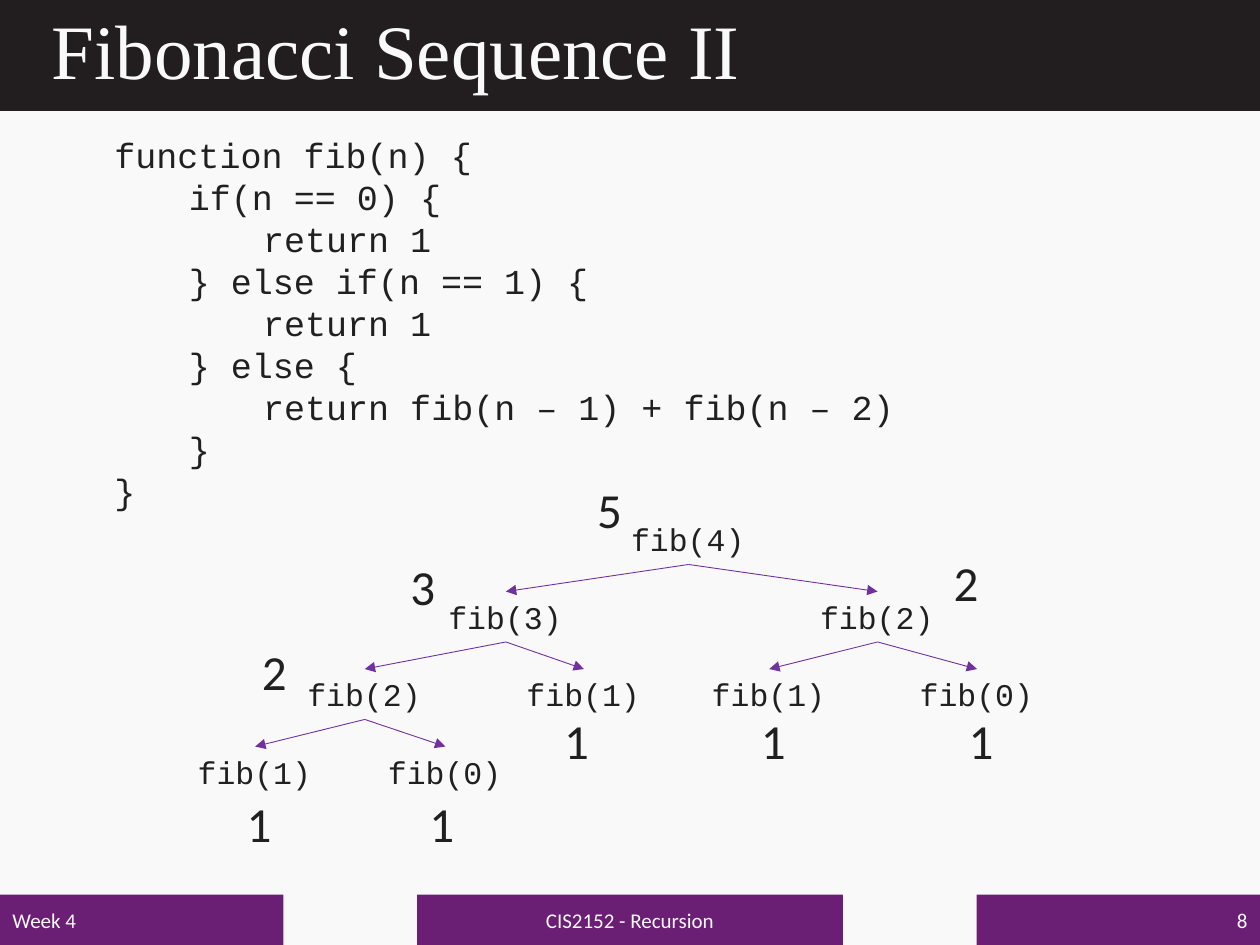
from dataclasses import dataclass

from lxml import etree
from pptx import Presentation
from pptx.dml.color import RGBColor
from pptx.enum import shapes, text
from pptx.oxml.ns import qn
from pptx.util import Inches, Pt


@dataclass(frozen=True)
class Theme:
    paper: str = "F9F9F9"
    ink: str = "202020"
    band: str = "221E1F"
    foot: str = "6A1F74"
    edge: str = "7030A0"
    serif: str = "Times New Roman"
    sans: str = "Calibri"
    mono: str = "Courier New"
    head: int = 44
    value: int = 28
    code: int = 20
    call: int = 18
    small: int = 12


@dataclass(frozen=True)
class Node:
    """One call: its left edge, its result and where that sits from the call."""
    name: str
    left: float
    value: str
    shift: tuple
    kids: tuple = ()


THEME = Theme()
ALIGN = text.PP_ALIGN
TAB = 0.59
CALL_W, CALL_H, ROW = 1.11, 0.4, 0.615
VALUE_W, VALUE_H = 0.4, 0.57

CODE = """function fib(n) {
\tif(n == 0) {
\t\treturn 1
\t} else if(n == 1) {
\t\treturn 1
\t} else {
\t\treturn fib(n – 1) + fib(n – 2)
\t}
}"""

TREE = Node("fib(4)", 3.44, "5", (-0.27, -0.32), (
    Node("fib(3)", 1.99, "3", (-0.3, -0.33), (
        Node("fib(2)", 0.87, "2", (-0.36, -0.27), (
            Node("fib(1)", 0, "1", (0.39, 0.32)),
            Node("fib(0)", 1.51, "1", (0.33, 0.32)))),
        Node("fib(1)", 2.61, "1", (0.3, 0.28)))),
    Node("fib(2)", 4.94, "2", (1.06, -0.36), (
        Node("fib(1)", 4.08, "1", (0.39, 0.28)),
        Node("fib(0)", 5.73, "1", (0.39, 0.28))))))


def color(code):
    return RGBColor.from_string(code)


def style(frame, face, size, ink, align=None):
    for para in frame.paragraphs:
        para.font.name = face
        para.font.size = Pt(size)
        para.font.color.rgb = color(ink)
        if align is not None:
            para.alignment = align


def add_bar(slide, box, fill):
    bar = slide.shapes.add_shape(shapes.MSO_SHAPE.RECTANGLE, *map(Inches, box))
    bar.shadow.inherit = False
    bar.fill.solid()
    bar.fill.fore_color.rgb = color(fill)
    bar.line.fill.background()
    return bar


def add_text(slide, box, words, face, size, ink, wrap=True):
    area = slide.shapes.add_textbox(*map(Inches, box))
    frame = area.text_frame
    frame.text = words
    frame.word_wrap = wrap
    frame.auto_size = text.MSO_AUTO_SIZE.SHAPE_TO_FIT_TEXT
    style(frame, face, size, ink)
    return area


def add_title(slide, box, words):
    left, top, width, height = box
    add_bar(slide, box, THEME.band)
    area = add_text(slide, (left + 0.31, top, width - 0.61, height - 0.02),
                    words, THEME.serif, THEME.head, THEME.paper)
    frame = area.text_frame
    frame.auto_size = text.MSO_AUTO_SIZE.NONE
    frame.vertical_anchor = text.MSO_ANCHOR.MIDDLE
    frame.paragraphs[0].line_spacing = 0.9


def add_code(slide, box):
    area = add_text(slide, box, CODE, THEME.mono, THEME.code, THEME.ink)
    for para in area.text_frame.paragraphs:
        props = para._p.get_or_add_pPr()
        stops = etree.Element(qn("a:tabLst"))
        for step in (1, 2):
            etree.SubElement(stops, qn("a:tab"), pos=str(Inches(TAB * step)), algn="l")
        props.insert_element_before(stops, "a:defRPr", "a:extLst")


def add_arrow(slide, start, end):
    """Join the bottom of one call to the top of another."""
    arrow = slide.shapes.add_connector(shapes.MSO_CONNECTOR.STRAIGHT, 0, 0, 0, 0)
    arrow.begin_connect(start, 2)
    arrow.end_connect(end, 0)
    arrow.line.color.rgb = color(THEME.edge)
    arrow.line.width = Pt(0.5)
    etree.SubElement(arrow.line._get_or_add_ln(), qn("a:tailEnd"), type="triangle")
    etree.SubElement(arrow._element.spPr, qn("a:effectLst"))


def add_tree(slide, left, top, node):
    """Draw a call, its result and all calls below it; return the call."""
    x = left + node.left
    call = add_text(slide, (x, top, CALL_W, CALL_H), node.name,
                    THEME.mono, THEME.call, THEME.ink, wrap=False)
    dx, dy = node.shift
    add_text(slide, (x + dx, top + dy, VALUE_W, VALUE_H), node.value,
             THEME.sans, THEME.value, THEME.ink, wrap=False)
    for kid in node.kids:
        add_arrow(slide, call, add_tree(slide, left, top + ROW, kid))
    return call


def add_footer(slide, box):
    left, top, width, height = box
    side, mid = 2.25, 3.38
    parts = (("Week 4", 0, side, ALIGN.LEFT),
             ("CIS2152 - Recursion", (width - mid) / 2, mid, ALIGN.CENTER),
             ("8", width - side, side, ALIGN.RIGHT))
    for words, x, wide, align in parts:
        bar = add_bar(slide, (left + x, top, wide, height), THEME.foot)
        bar.text_frame.text = words
        bar.text_frame.vertical_anchor = text.MSO_ANCHOR.MIDDLE
        style(bar.text_frame, THEME.sans, THEME.small, THEME.paper, align)


def main():
    deck = Presentation()
    deck.slide_width, deck.slide_height = Inches(10), Inches(7.5)
    slide = deck.slides.add_slide(deck.slide_layouts[6])
    slide.background.fill.solid()
    slide.background.fill.fore_color.rgb = color(THEME.paper)
    add_title(slide, (0, 0, 10, 0.88), "Fibonacci Sequence II")
    add_footer(slide, (0, 7.1, 10, 0.4))
    add_code(slide, (0.81, 1.01, 8.38, 3.13))
    add_tree(slide, 1.47, 4.08, TREE)
    deck.save("out.pptx")


if __name__ == "__main__":
    main()
